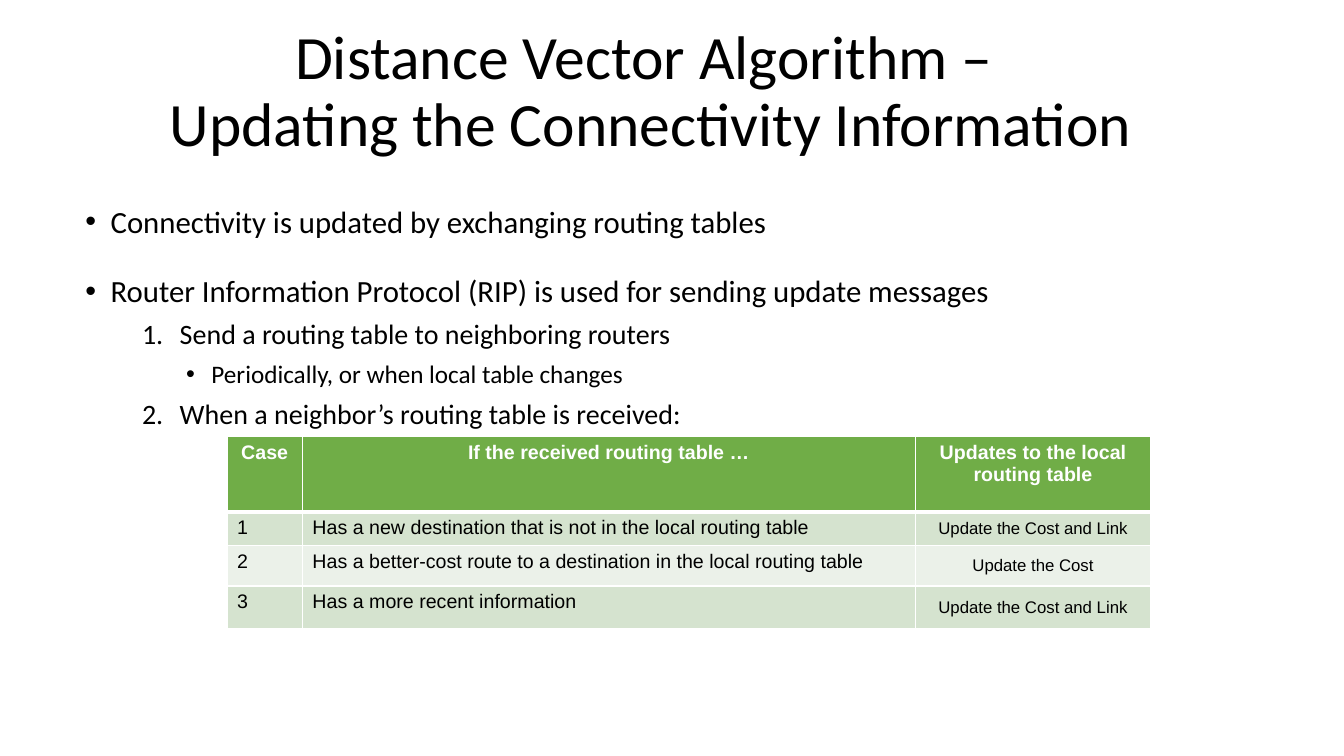
"""Build the slide on updating connectivity in the distance vector algorithm."""
from lxml.etree import SubElement
from pptx import Presentation
from pptx.dml.color import RGBColor
from pptx.enum.text import MSO_ANCHOR as Anchor, PP_ALIGN as Align
from pptx.oxml.ns import qn
from pptx.util import Cm, Pt

BLACK = RGBColor(0x00, 0x00, 0x00)
WHITE = RGBColor(0xFF, 0xFF, 0xFF)
GREEN = RGBColor(0x70, 0xAD, 0x47)
BANDS = (RGBColor(0xD5, 0xE3, 0xCF), RGBColor(0xEB, 0xF1, 0xE9))

TITLE = "Distance Vector Algorithm – \vUpdating the Connectivity Information"
POINTS = [
    (0, "Connectivity is updated by exchanging routing tables", 0),
    (0, "Router Information Protocol (RIP) is used for sending update messages", 26),
    (1, "Send a routing table to neighboring routers", 8),
    (2, "Periodically, or when local table changes", 8),
    (1, "When a neighbor’s routing table is received:", 8),
]
LEVELS = [
    dict(size=22, indent=0.64, hanging=0.64),
    dict(size=20, indent=2.38, hanging=0.95, numbered=True),
    dict(size=18, indent=3.18, hanging=0.64),
]
CASES = [
    ("Case", "If the received routing table …", "Updates to the local routing table"),
    ("1", "Has a new destination that is not in the local routing table",
     "Update the Cost and Link"),
    ("2", "Has a better-cost route to a destination in the local routing table",
     "Update the Cost"),
    ("3", "Has a more recent information", "Update the Cost and Link"),
]
WIDTHS = (1.9, 15.45, 5.93)
HEIGHTS = (1.9, 0.84, 1.02, 1.07)


def write(para, text, size, font="Calibri", color=BLACK, bold=False,
          align=Align.LEFT, spacing=None, before=0):
    para.text = text
    para.alignment = align
    para.space_before = Pt(before)
    if spacing:
        para.line_spacing = spacing
    for span in para.runs:
        span.font.size = Pt(size)
        span.font.name = font
        span.font.bold = bold
        span.font.color.rgb = color


def add_bullet(para, indent, hanging, numbered=False):
    properties = para._p.get_or_add_pPr()
    properties.set("marL", str(Cm(indent)))
    properties.set("indent", str(-Cm(hanging)))
    SubElement(properties, qn("a:buFont"), typeface="Calibri" if numbered else "Arial")
    if numbered:
        SubElement(properties, qn("a:buAutoNum"), type="arabicPeriod")
    else:
        SubElement(properties, qn("a:buChar"), char="•")


def add_box(page, left, top, width, height, anchor):
    frame = page.shapes.add_textbox(Cm(left), Cm(top), Cm(width), Cm(height)).text_frame
    frame.word_wrap = True
    frame.vertical_anchor = anchor
    return frame


def add_borders(cell, top, bottom):
    properties = cell._tc.get_or_add_tcPr()
    for side, points in (("L", 1), ("R", 1), ("T", top), ("B", bottom)):
        line = SubElement(properties, qn(f"a:ln{side}"), w=str(Pt(points)))
        SubElement(SubElement(line, qn("a:solidFill")), qn("a:srgbClr"), val=str(WHITE))


def add_points(page):
    frame = add_box(page, 1.9, 5.08, 23.93, 12.57, Anchor.TOP)
    for index, (level, text, before) in enumerate(POINTS):
        para = frame.add_paragraph() if index else frame.paragraphs[0]
        para.level = level
        style = dict(LEVELS[level])
        size = style.pop("size")
        add_bullet(para, **style)
        write(para, text, size, spacing=0.9, before=before)


def add_cases(page):
    table = page.shapes.add_table(len(CASES), len(WIDTHS), Cm(5.72), Cm(11),
                                  Cm(sum(WIDTHS)), Cm(sum(HEIGHTS))).table
    for column, width in zip(table.columns, WIDTHS):
        column.width = Cm(width)
    for index, (row, height, texts) in enumerate(zip(table.rows, HEIGHTS, CASES)):
        row.height = Cm(height)
        header = index == 0
        for position, (cell, text) in enumerate(zip(row.cells, texts)):
            update = position == 2 and not header
            add_borders(cell, top=3 if index == 1 else 1, bottom=3 if header else 1)
            cell.fill.solid()
            cell.fill.fore_color.rgb = GREEN if header else BANDS[(index - 1) % 2]
            cell.vertical_anchor = Anchor.MIDDLE if update else Anchor.TOP
            write(cell.text_frame.paragraphs[0], text, 12 if update else 14,
                  font="Arial", color=WHITE if header else BLACK, bold=header,
                  align=Align.CENTER if header or update else Align.LEFT)


def main():
    deck = Presentation()
    deck.slide_width, deck.slide_height = Cm(33.87), Cm(19.05)
    page = deck.slides.add_slide(deck.slide_layouts[6])
    title = add_box(page, 3.39, 0.89, 26.04, 2.92, Anchor.MIDDLE)
    write(title.paragraphs[0], TITLE, 44, align=Align.CENTER, spacing=0.9)
    add_points(page)
    add_cases(page)
    deck.save("out.pptx")


if __name__ == "__main__":
    main()
